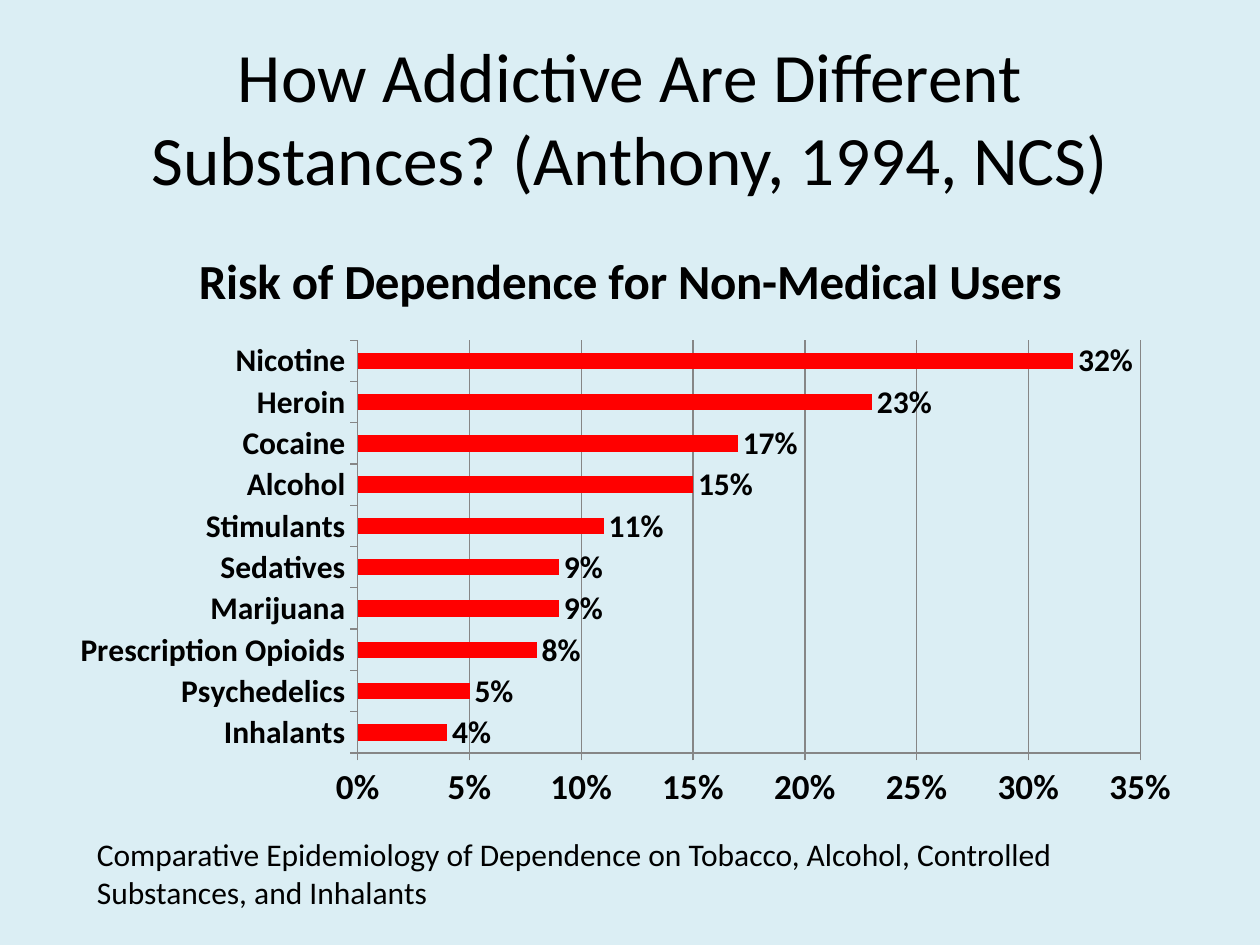
from lxml import etree
from pptx import Presentation
from pptx.chart.data import CategoryChartData as Data
from pptx.dml.color import RGBColor as RGB
from pptx.enum.chart import XL_CHART_TYPE as Kind, XL_LABEL_POSITION as Pos
from pptx.enum.chart import XL_TICK_MARK as Tick
from pptx.enum.text import MSO_ANCHOR as Anchor, PP_ALIGN as Align
from pptx.oxml.ns import qn
from pptx.util import Inches, Pt

RISKS = {
    "Inhalants": 0.04, "Psychedelics": 0.05, "Prescription Opioids": 0.08,
    "Marijuana": 0.09, "Sedatives": 0.09, "Stimulants": 0.11,
    "Alcohol": 0.15, "Cocaine": 0.17, "Heroin": 0.23, "Nicotine": 0.32,
}


def color(code):
    return RGB.from_string(code)


class Deck:
    face, ink, back = "Calibri", "000000", "DBEEF4"
    bar, rule = "FF0000", "868686"

    def __init__(self, wide, high):
        self.prs = Presentation()
        self.prs.slide_width, self.prs.slide_height = Inches(wide), Inches(high)
        self.slide = self.prs.slides.add_slide(self.prs.slide_layouts[6])
        fill = self.slide.background.fill
        fill.solid()
        fill.fore_color.rgb = color(self.back)

    def style(self, font, size, bold=False):
        font.name, font.size, font.bold = self.face, Pt(size), bold
        font.color.rgb = color(self.ink)

    def text(self, words, box, size, align=Align.LEFT, anchor=Anchor.TOP):
        frame = self.slide.shapes.add_textbox(*map(Inches, box)).text_frame
        frame.word_wrap, frame.vertical_anchor = True, anchor
        para = frame.paragraphs[0]
        para.text, para.alignment = words, align
        self.style(para.font, size)

    def axis(self, axis, size):
        axis.major_tick_mark, axis.minor_tick_mark = Tick.OUTSIDE, Tick.NONE
        self.style(axis.tick_labels.font, size, True)
        axis.format.line.color.rgb = color(self.rule)
        axis.format.line.width = Pt(0.75)

    def place(self, chart, **area):
        """Fix the inner plot area as fractions of the chart."""
        plot = chart.element.find(".//" + qn("c:plotArea"))
        layout = plot.find(qn("c:layout"))
        if layout is None:
            layout = etree.Element(qn("c:layout"))
            plot.insert(0, layout)
        manual = etree.SubElement(layout, qn("c:manualLayout"))
        marks = {"layoutTarget": "inner", "xMode": "edge", "yMode": "edge"}
        for tag, value in {**marks, **area}.items():
            etree.SubElement(manual, qn("c:" + tag)).set("val", str(value))

    def bars(self, title, values, box):
        data = Data(number_format="0%")
        data.categories = list(values)
        data.add_series("Series 1", list(values.values()))
        chart = self.slide.shapes.add_chart(
            Kind.BAR_CLUSTERED, *map(Inches, box), data).chart
        self.style(chart.font, 10)
        chart.has_legend = False

        # Chart title
        chart.has_title = True
        chart.chart_title.include_in_layout = False
        para = chart.chart_title.text_frame.paragraphs[0]
        para.text = title
        self.style(para.font, 28, True)

        # Axes and grid
        self.axis(chart.category_axis, 18)
        scale = chart.value_axis
        self.axis(scale, 20)
        scale.minimum_scale, scale.maximum_scale, scale.major_unit = 0, 0.35, 0.05
        scale.tick_labels.number_format = "0%"
        scale.tick_labels.number_format_is_linked = False
        scale.has_major_gridlines = True
        grid = scale.major_gridlines.format.line
        grid.color.rgb, grid.width = color(self.rule), Pt(0.75)

        # Bars and labels
        plot = chart.plots[0]
        plot.gap_width, plot.vary_by_categories = 150, False
        fill = plot.series[0].format.fill
        fill.solid()
        fill.fore_color.rgb = color(self.bar)
        labels = plot.series[0].data_labels
        labels.show_value, labels.position = True, Pos.OUTSIDE_END
        labels.number_format, labels.number_format_is_linked = "0%", False
        self.style(labels.font, 18, True)
        self.place(chart, x=0.26, y=0.2, w=0.69, h=0.69)


def main():
    deck = Deck(10, 7.5)
    # Heading
    deck.text("How Addictive Are Different Substances? (Anthony, 1994, NCS)",
              (0.5, 0.3, 9, 1.25), 39.6, Align.CENTER, Anchor.MIDDLE)
    # Source note
    deck.text("Comparative Epidemiology of Dependence on Tobacco, Alcohol, "
              "Controlled Substances, and Inhalants", (0.67, 6.58, 8.25, 0.71), 18)
    # Risk chart
    deck.bars("Risk of Dependence for Non-Medical Users", RISKS,
              (0.5, 1.75, 9, 4.75))
    deck.prs.save("out.pptx")


if __name__ == "__main__":
    main()
